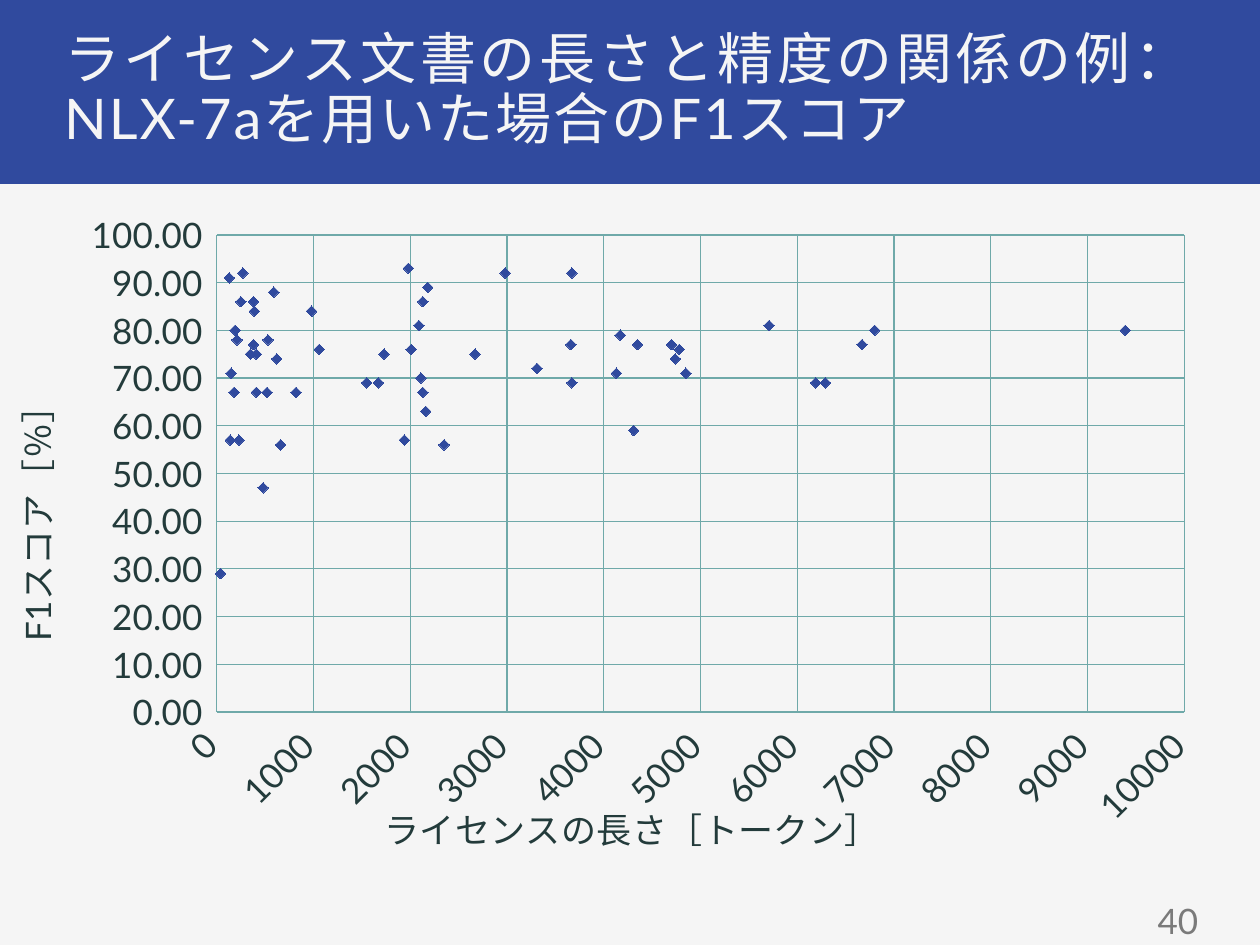
from dataclasses import dataclass

from lxml import etree
from pptx import Presentation
from pptx.chart.data import XyChartData
from pptx.dml.color import RGBColor
from pptx.enum.chart import XL_CHART_TYPE, XL_MARKER_STYLE, XL_TICK_MARK
from pptx.enum.shapes import MSO_SHAPE
from pptx.enum.text import MSO_ANCHOR, PP_ALIGN
from pptx.oxml import parse_xml
from pptx.oxml.ns import nsdecls
from pptx.util import Inches, Pt

RECT = MSO_SHAPE.RECTANGLE
MIDDLE = MSO_ANCHOR.MIDDLE
JUSTIFY, RIGHT = PP_ALIGN.JUSTIFY, PP_ALIGN.RIGHT
SCATTER = XL_CHART_TYPE.XY_SCATTER
DIAMOND = XL_MARKER_STYLE.DIAMOND
NO_TICK = XL_TICK_MARK.NONE

FONT = "Lato"
COLORS = {"paper": "F5F5F5", "blue": "304A9E", "ink": "233B3B",
          "grid": "6FA9A9", "grey": "7A7A7A"}

# (license length in tokens, F1 score in percent)
SCORES = [
    (2010, 76), (9390, 80), (1980, 93), (4130, 71), (1670, 69), (590, 88),
    (250, 86), (350, 75), (620, 74), (3310, 72), (5710, 81), (2130, 86),
    (3670, 69), (4740, 74), (2090, 81), (2180, 89), (180, 67), (480, 47),
    (660, 56), (40, 29), (1940, 57), (130, 91), (6670, 77), (3670, 92),
    (6800, 80), (4850, 71), (1550, 69), (230, 57), (2110, 70), (410, 67),
    (1730, 75), (150, 71), (2160, 63), (520, 67), (190, 80), (210, 78),
    (3660, 77), (4780, 76), (2980, 92), (380, 77), (2670, 75), (390, 84),
    (1060, 76), (4170, 79), (2350, 56), (140, 57), (2130, 67), (980, 84),
    (270, 92), (820, 67), (6190, 69), (6290, 69), (4310, 59), (4700, 77),
    (4350, 77), (380, 86), (410, 75), (530, 78),
]


@dataclass
class TextSpec:
    text: str
    box: tuple[float, float, float, float]
    size: int
    color: str
    align: PP_ALIGN
    inset: float
    line_spacing: float = 1.0
    tracking: int = 0


@dataclass
class AxisSpec:
    title: str
    title_at: tuple[float, float]  # shares of the chart's size
    maximum: int
    step: int
    number_format: str


TEXTS = [
    TextSpec("ライセンス文書の長さと精度の関係の例：\vNLX-7aを用いた場合のF1スコア",
             (0.43, 0.1, 9.13, 1.25), 32, "paper", JUSTIFY, 0.08, 0.9, 110),
    TextSpec("40", (7.32, 7.11, 2.25, 0.39), 20, "grey", RIGHT, 0.06),
]
X_AXIS = AxisSpec("ライセンスの長さ［トークン］", (0.3, 0.8), 10000, 1000, "0_ ")
Y_AXIS = AxisSpec("F1スコア［％］", (0, 0.26), 100, 10, "0.00_ ")


def rgb(name: str) -> RGBColor:
    return RGBColor.from_string(COLORS[name])


def set_font(font, size: int, color: str) -> None:
    font.name, font.size, font.bold = FONT, Pt(size), False
    font.color.rgb = rgb(color)


def add_text(s, spec: TextSpec) -> None:
    tf = s.shapes.add_textbox(*map(Inches, spec.box)).text_frame
    tf.word_wrap = True
    tf.vertical_anchor = MIDDLE
    tf.margin_left = tf.margin_right = Inches(spec.inset)
    tf.margin_top = tf.margin_bottom = Inches(0.06)
    p = tf.paragraphs[0]
    p.text, p.alignment, p.line_spacing = spec.text, spec.align, spec.line_spacing
    set_font(p.font, spec.size, spec.color)
    if spec.tracking:
        for r in p.runs:
            r.font._element.set("spc", str(spec.tracking))


def manual_layout(**values):
    """Return a c:layout element; keys are tags such as xMode, x, y, w, h."""
    layout = parse_xml(f"<c:layout {nsdecls('c')}><c:manualLayout/></c:layout>")
    ns = layout.nsmap["c"]
    for tag, value in values.items():
        etree.SubElement(layout[0], f"{{{ns}}}{tag}").set("val", str(value))
    return layout


def style_axis(axis, spec: AxisSpec) -> None:
    axis.minimum_scale, axis.maximum_scale = 0, spec.maximum
    axis.major_unit = spec.step
    axis.major_tick_mark = axis.minor_tick_mark = NO_TICK
    axis.has_major_gridlines = True
    for line in (axis.format.line, axis.major_gridlines.format.line):
        line.color.rgb, line.width = rgb("grid"), Pt(0.75)
    labels = axis.tick_labels
    labels.number_format, labels.number_format_is_linked = spec.number_format, False
    set_font(labels.font, 20, "ink")

    title = axis.axis_title
    p = title.text_frame.paragraphs[0]
    p.text = spec.title
    set_font(p.font, 20, "ink")
    for old in title._element.xpath("c:layout"):
        title._element.remove(old)
    x, y = spec.title_at
    title._element.xpath("c:tx")[0].addnext(
        manual_layout(xMode="edge", yMode="edge", x=x, y=y))


def add_score_chart(s) -> None:
    data = XyChartData()
    series = data.add_series("F1スコア")
    for tokens, score in SCORES:
        series.add_data_point(tokens, score)
    box = map(Inches, (0, 1.46, 10, 6.04))
    chart = s.shapes.add_chart(SCATTER, *box, data).chart
    chart.has_legend = chart.has_title = False
    set_font(chart.font, 20, "ink")
    style_axis(chart.category_axis, X_AXIS)
    style_axis(chart.value_axis, Y_AXIS)
    chart.category_axis.tick_labels.font._element.getparent().getparent() \
        .getparent().bodyPr.set("rot", "-2700000")
    chart.value_axis.axis_title.text_frame._txBody.bodyPr.set("rot", "-5400000")

    plot = chart.plots[0]
    plot.vary_by_categories = False
    points = plot.series[0]
    points.smooth = False
    points.format.line.fill.background()
    marker = points.marker
    marker.style, marker.size = DIAMOND, 6
    marker.format.fill.solid()
    marker.format.fill.fore_color.rgb = rgb("blue")
    marker.format.line.color.rgb = rgb("blue")

    area = chart._chartSpace.chart.plotArea
    for old in area.xpath("c:layout"):
        area.remove(old)
    area.insert(0, manual_layout(layoutTarget="inner", xMode="edge", yMode="edge",
                                 x=0.172, y=0.067, w=0.768, h=0.627))


def main() -> None:
    prs = Presentation()
    prs.slide_width, prs.slide_height = Inches(10), Inches(7.5)
    s = prs.slides.add_slide(prs.slide_layouts[6])
    s.background.fill.solid()
    s.background.fill.fore_color.rgb = rgb("paper")

    band = s.shapes.add_shape(RECT, *map(Inches, (-0.02, -0.02, 10.04, 1.48)))
    band.shadow.inherit = False
    band.fill.solid()
    band.fill.fore_color.rgb = rgb("blue")
    band.line.fill.background()

    for spec in TEXTS:
        add_text(s, spec)
    add_score_chart(s)
    prs.save("out.pptx")


if __name__ == "__main__":
    main()
